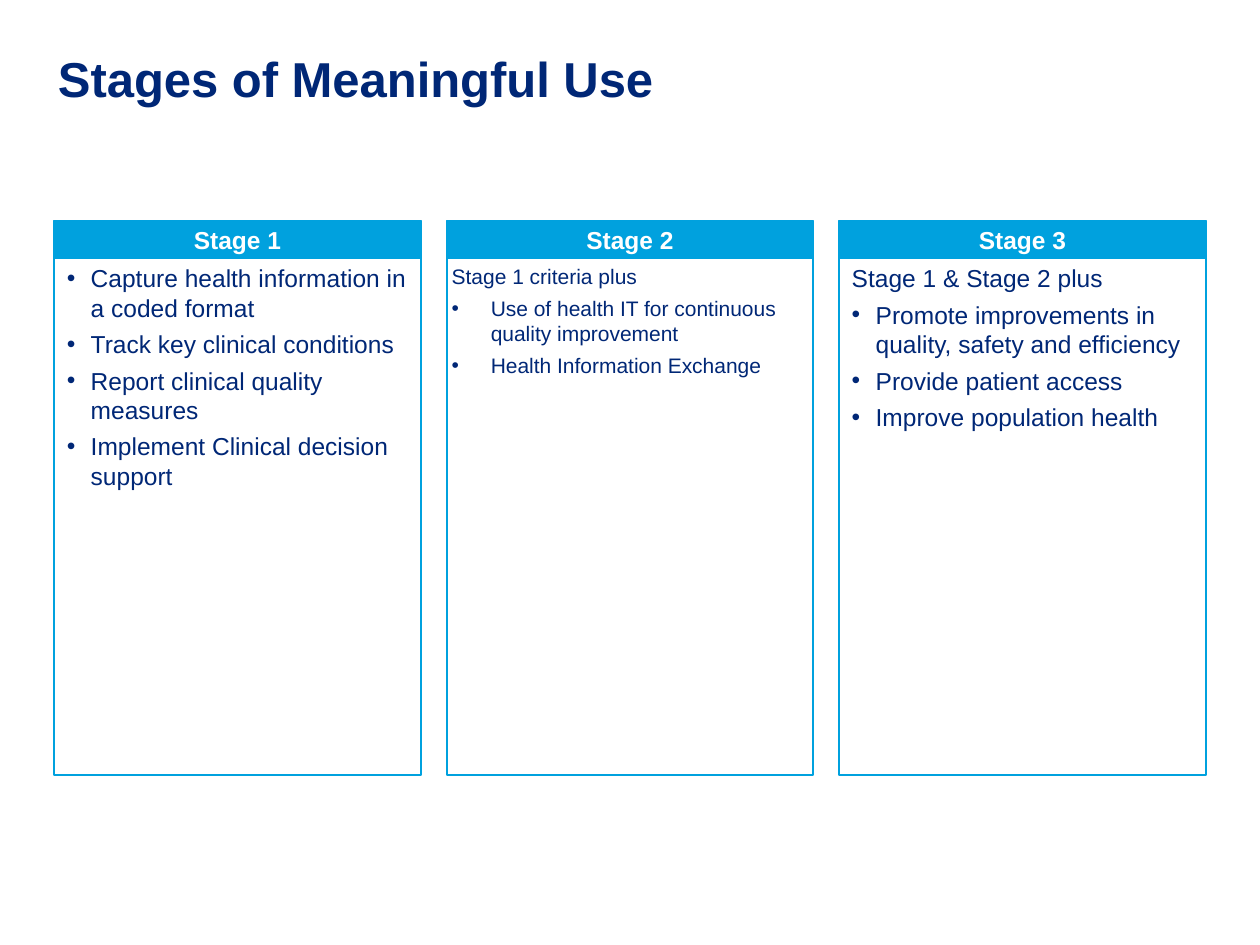
from dataclasses import dataclass

from lxml.etree import SubElement
from pptx import Presentation
from pptx.dml.color import RGBColor
from pptx.enum.shapes import MSO_SHAPE
from pptx.enum.text import MSO_ANCHOR, MSO_AUTO_SIZE, PP_ALIGN
from pptx.oxml.ns import qn
from pptx.util import Inches, Pt


@dataclass(frozen=True)
class Theme:
    font: str = "Arial"
    navy: RGBColor = RGBColor(0x00, 0x27, 0x76)
    sky: RGBColor = RGBColor(0x00, 0xA1, 0xDE)
    white: RGBColor = RGBColor(0xFF, 0xFF, 0xFF)
    title_size: int = 28
    text_size: int = 14
    small_size: int = 12


theme = Theme()

# Each stage: heading, lead-in, lead-in indent, bullets, bullet indent (left, hanging), size
stages = [
    ("Stage 1", None, 0,
     ["Capture health information in a coded format",
      "Track key clinical conditions",
      "Report clinical quality measures",
      "Implement Clinical decision support"],
     (0.25, -0.19), theme.text_size),
    ("Stage 2", "Stage 1 criteria plus", 0,
     ["Use of health IT for continuous quality improvement",
      "Health Information Exchange"],
     (0.31, -0.31), theme.small_size),
    ("Stage 3", "Stage 1 & Stage 2 plus", 0.06,
     ["Promote improvements in quality, safety and efficiency",
      "Provide patient access",
      "Improve population health"],
     (0.25, -0.19), theme.text_size),
]

# Grid in inches
left, right = 0.43, 9.57
column_width = 2.91
column_step = (right - left - column_width) / (len(stages) - 1)
top, header_height, body_height = 1.75, 0.3, 4.1
inset = 0.04


def add_panel(x, y, height, fill, anchor):
    """Add an outlined rectangle one column wide and return its text frame."""
    panel = page.shapes.add_shape(
        MSO_SHAPE.RECTANGLE, Inches(x), Inches(y), Inches(column_width), Inches(height))
    panel.shadow.inherit = False
    if fill is None:
        panel.fill.background()
    else:
        panel.fill.solid()
        panel.fill.fore_color.rgb = fill
    panel.line.color.rgb = theme.sky
    panel.line.width = Pt(1)
    frame = panel.text_frame
    frame.word_wrap = True
    frame.vertical_anchor = anchor
    frame.margin_left = frame.margin_right = Inches(inset)
    frame.margin_top = frame.margin_bottom = Inches(inset)
    return frame


def style(paragraph, size, color, bold=False, align=PP_ALIGN.LEFT, before=4):
    paragraph.alignment = align
    paragraph.space_before = Pt(before)
    paragraph.font.name = theme.font
    paragraph.font.size = Pt(size)
    paragraph.font.bold = bold
    paragraph.font.color.rgb = color


deck = Presentation()
deck.slide_width, deck.slide_height = Inches(10), Inches(7.5)
page = deck.slides.add_slide(deck.slide_layouts.get_by_name("Title Only"))

title = page.shapes.title
title.left, title.top = Inches(0.46), Inches(0.49)
title.width, title.height = Inches(9.11), Inches(0.36)
frame = title.text_frame
frame.text = "Stages of Meaningful Use"
frame.word_wrap = True
frame.auto_size = MSO_AUTO_SIZE.NONE
frame.vertical_anchor = MSO_ANCHOR.BOTTOM
frame.margin_left = frame.margin_right = frame.margin_top = frame.margin_bottom = 0
frame.paragraphs[0].line_spacing = 0.85
style(frame.paragraphs[0], theme.title_size, theme.navy, bold=True, before=0)

for column, (heading, lead, lead_indent, bullets, indent, size) in enumerate(stages):
    x = left + column * column_step

    header = add_panel(x, top, header_height, theme.sky, MSO_ANCHOR.MIDDLE)
    header.text = heading
    style(header.paragraphs[0], theme.text_size, theme.white, bold=True, align=PP_ALIGN.CENTER)

    body = add_panel(x, top + header_height, body_height, None, MSO_ANCHOR.TOP)
    body.text = "\n".join(([lead] if lead else []) + bullets)
    for index, paragraph in enumerate(body.paragraphs):
        is_lead = lead is not None and index == 0
        margin, hanging = (lead_indent, 0) if is_lead else indent
        properties = paragraph._p.get_or_add_pPr()
        properties.set("marL", str(Inches(margin)))
        properties.set("indent", str(Inches(hanging)))
        if not is_lead:
            SubElement(properties, qn("a:buFont"), typeface=theme.font)
            SubElement(properties, qn("a:buChar"), char="•")
        style(paragraph, size, theme.navy)

deck.save("out.pptx")
